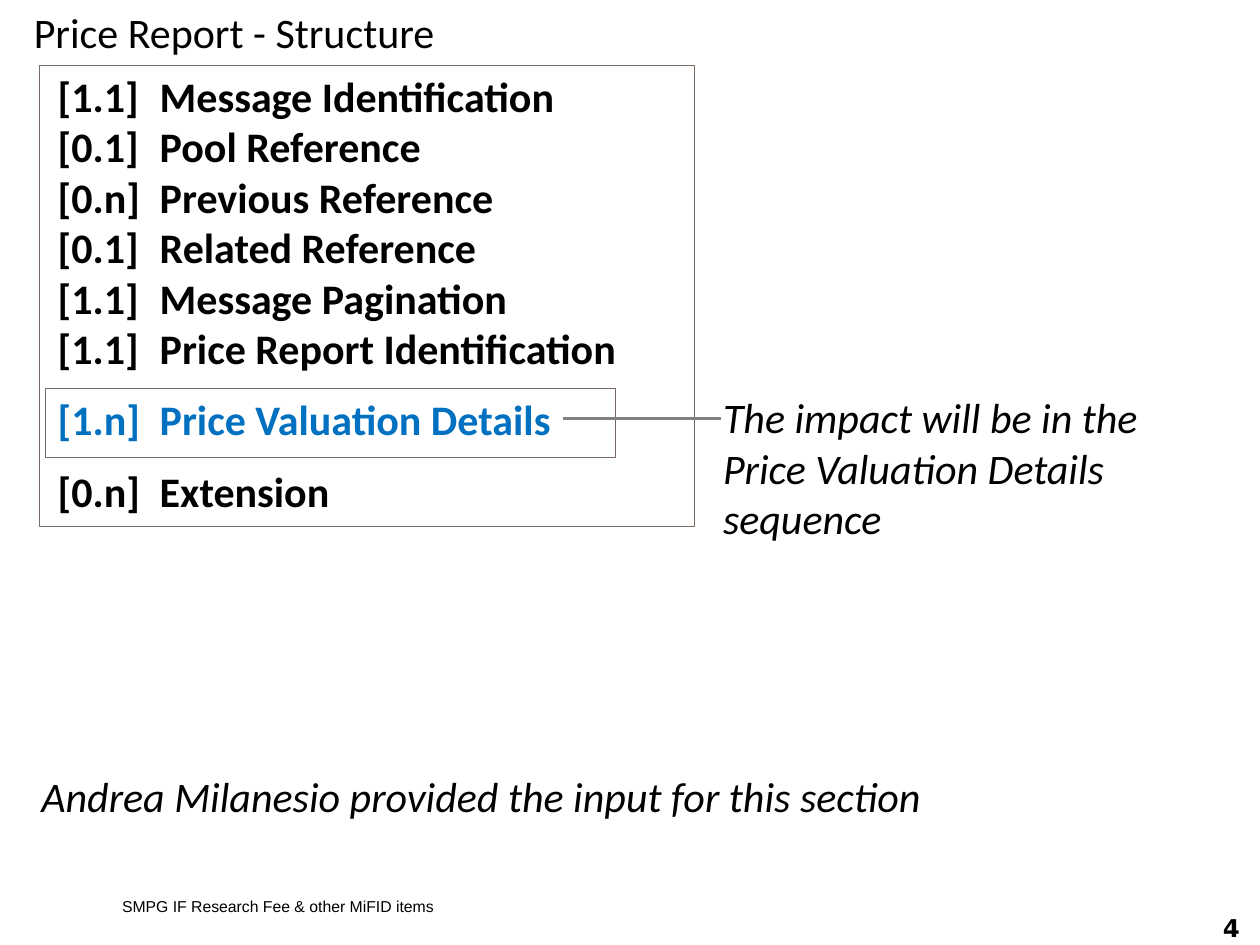
from typing import NamedTuple, Optional

from lxml import etree
from pptx import Presentation
from pptx.dml.color import RGBColor
from pptx.enum.shapes import MSO_CONNECTOR, MSO_SHAPE
from pptx.enum.text import MSO_ANCHOR, PP_ALIGN
from pptx.oxml.ns import qn
from pptx.util import Inches, Pt

RECTANGLE = MSO_SHAPE.RECTANGLE
STRAIGHT = MSO_CONNECTOR.STRAIGHT
TOP, MIDDLE = MSO_ANCHOR.TOP, MSO_ANCHOR.MIDDLE
LEFT, RIGHT = PP_ALIGN.LEFT, PP_ALIGN.RIGHT

BLACK, WHITE = "000000", "FFFFFF"
HIGHLIGHT, FRAME, CALLOUT = "0070C0", "766A62", "808080"
TAB_STOPS = (0.81, 1.31)


class Box(NamedTuple):
    left: float
    top: float
    width: float
    height: float


class Block(NamedTuple):
    cardinality: str
    name: str
    color: str = BLACK
    before: float = 0
    after: float = 0


BLOCKS = [
    Block("[1.1]", "Message Identification"),
    Block("[0.1]", "Pool Reference"),
    Block("[0.n]", "Previous Reference"),
    Block("[0.1]", "Related Reference"),
    Block("[1.1]", "Message Pagination"),
    Block("[1.1]", "Price Report Identification", after=6),
    Block("[1.n]", "Price Valuation Details", HIGHLIGHT, before=6, after=6),
    Block("[0.n]", "Extension", before=6),
]


def rgb(value: str) -> RGBColor:
    return RGBColor.from_string(value)


def add_frame(slide, box: Box, fill: Optional[str] = None) -> None:
    frame = slide.shapes.add_shape(RECTANGLE, *map(Inches, box))
    frame.shadow.inherit = False
    if fill:
        frame.fill.solid()
        frame.fill.fore_color.rgb = rgb(fill)
    else:
        frame.fill.background()
    frame.line.color.rgb = rgb(FRAME)
    frame.line.width = Pt(0.25)


def add_text_frame(slide, box: Box, anchor=TOP, wrap: bool = True):
    frame = slide.shapes.add_textbox(*map(Inches, box)).text_frame
    frame.word_wrap = wrap
    frame.vertical_anchor = anchor
    return frame


def write(paragraph, text: str, *, size: float = 24, font: str = "Calibri",
          color: str = BLACK, bold: bool = False, italic: bool = False,
          align=LEFT) -> None:
    paragraph.alignment = align
    run = paragraph.add_run()
    run.text = text
    run.font.size = Pt(size)
    run.font.name = font
    run.font.bold = bold
    run.font.italic = italic
    run.font.color.rgb = rgb(color)


def add_tabs(paragraph) -> None:
    tabs = etree.SubElement(paragraph._p.get_or_add_pPr(), qn("a:tabLst"))
    for stop in TAB_STOPS:
        etree.SubElement(tabs, qn("a:tab"), pos=str(Inches(stop)), algn="l")


def add_blocks(slide, box: Box, blocks: list[Block]) -> None:
    frame = add_text_frame(slide, box)
    for index, block in enumerate(blocks):
        paragraph = frame.add_paragraph() if index else frame.paragraphs[0]
        add_tabs(paragraph)
        if block.before:
            paragraph.space_before = Pt(block.before)
        if block.after:
            paragraph.space_after = Pt(block.after)
        write(paragraph, f"{block.cardinality}\t{block.name}",
              color=block.color, bold=True)


def add_callout_line(slide, start: float, end: float, y: float) -> None:
    line = slide.shapes.add_connector(
        STRAIGHT, Inches(start), Inches(y), Inches(end), Inches(y))
    line.line.color.rgb = rgb(CALLOUT)
    line.line.width = Pt(1.5)
    etree.SubElement(line._element.spPr, qn("a:effectLst"))


def main() -> None:
    presentation = Presentation()
    presentation.slide_width = Inches(10)
    presentation.slide_height = Inches(7.5)
    slide = presentation.slides.add_slide(presentation.slide_layouts[6])

    # Title
    title = add_text_frame(slide, Box(0.17, 0, 9.73, 0.56))
    write(title.paragraphs[0], "Price Report - Structure")

    # Footer and page number
    footer = add_text_frame(slide, Box(0.87, 7.07, 6.21, 0.25), MIDDLE)
    write(footer.paragraphs[0], "SMPG IF Research Fee & other MiFID items",
          size=9, font="Arial")
    page = add_text_frame(slide, Box(9.11, 7.24, 0.83, 0.25), MIDDLE)
    write(page.paragraphs[0], "4", size=14, font="DejaVu Sans", bold=True,
          align=RIGHT)

    # Message structure, with the affected sequence framed
    add_frame(slide, Box(0.31, 0.52, 5.2, 3.66), WHITE)
    add_blocks(slide, Box(0.36, 0.51, 4.77, 3.67), BLOCKS)
    add_frame(slide, Box(0.36, 3.08, 4.52, 0.55))

    # Credit and impact remark
    credit = add_text_frame(slide, Box(0.23, 6.07, 7.26, 0.5), wrap=False)
    write(credit.paragraphs[0],
          "Andrea Milanesio provided the input for this section", italic=True)
    impact = add_text_frame(slide, Box(5.64, 3.06, 3.93, 1.31))
    write(impact.paragraphs[0],
          "The impact will be in the Price Valuation Details sequence",
          italic=True)
    add_callout_line(slide, 4.47, 5.72, 3.32)

    presentation.save("out.pptx")


if __name__ == "__main__":
    main()
